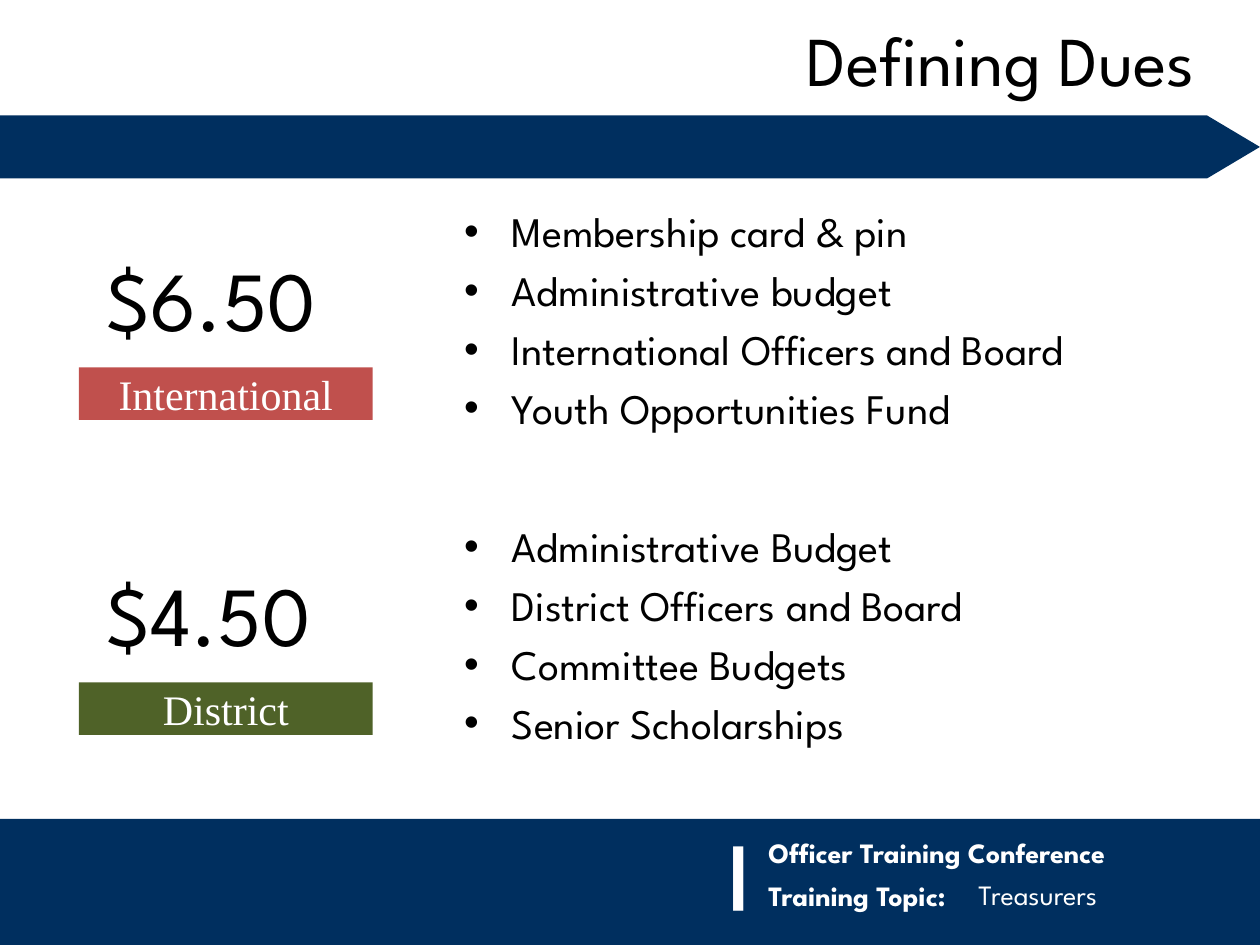
from pptx import Presentation
from pptx.dml.color import RGBColor
from pptx.enum.shapes import MSO_SHAPE
from pptx.enum.text import MSO_ANCHOR, MSO_AUTO_SIZE, PP_ALIGN
from pptx.util import Inches, Pt

RECT, ARROW = MSO_SHAPE.RECTANGLE, MSO_SHAPE.PENTAGON
TOP, MID = MSO_ANCHOR.TOP, MSO_ANCHOR.MIDDLE
LEFT, MIDDLE, RIGHT = PP_ALIGN.LEFT, PP_ALIGN.CENTER, PP_ALIGN.RIGHT
FIXED = MSO_AUTO_SIZE.NONE

THEME = {
    "navy": "002F5F", "red": "C0504D", "green": "4F6228",
    "black": "000000", "white": "FFFFFF",
    "sans": "League Spartan", "serif": "Times New Roman",
    "title": 40, "price": 48, "list": 24, "foot": 16, "bar": 44,
}

deck = Presentation()
deck.slide_width, deck.slide_height = Inches(10), Inches(7.5)
COL, ROW = deck.slide_width / 120, deck.slide_height / 90
slide = deck.slides.add_slide(deck.slide_layouts[3])
shapes = slide.shapes


def grid(x, y, w, h):
    return round(x * COL), round(y * ROW), round(w * COL), round(h * ROW)


def write(shape, text, size, ink="black", font="sans", bold=False,
          align=LEFT, anchor=TOP, gap=0.2, place=None, bullet=False):
    if place:
        shape.left, shape.top, shape.width, shape.height = grid(*place)
    frame = shape.text_frame
    frame.text = text
    frame.word_wrap, frame.auto_size = True, FIXED
    frame.vertical_anchor = anchor
    for para in frame.paragraphs:
        para.alignment = align
        para.space_before = Pt(THEME[size] * gap)
        para.font.size = Pt(THEME[size])
        para.font.name = THEME[font]
        para.font.bold = bold
        para.font.color.rgb = RGBColor.from_string(THEME[ink])
        if bullet:
            props = para._p.get_or_add_pPr()
            props.set("marL", str(Inches(0.38)))
            props.set("indent", str(-Inches(0.38)))
            mark = props.makeelement(
                "{http://schemas.openxmlformats.org/drawingml/2006/main}buChar",
                {"char": "•"})
            props.append(mark)


bands = [
    (ARROW, "navy", (0, 11, 120, 6), None),
    (RECT, "navy", (0, 78, 120, 12), None),
    (RECT, "red", (7.5, 35, 28, 5), "International"),
    (RECT, "green", (7.5, 65, 28, 5), "District"),
]
for kind, fill, place, label in bands:
    band = shapes.add_shape(kind, *grid(*place))
    band.shadow.inherit = False
    band.fill.solid()
    band.fill.fore_color.rgb = RGBColor.from_string(THEME[fill])
    band.line.fill.background()
    if kind == ARROW:
        band.adjustments[0] = 0.84
    if label:
        write(band, label, "list", ink="white", font="serif",
              align=MIDDLE, anchor=MID, gap=0)

write(shapes.title, "Defining Dues", "title", align=RIGHT,
      place=(41, 1, 74, 9))

dues = [
    ("$6.50", ["Membership card & pin", "Administrative budget",
               "International Officers and Board",
               "Youth Opportunities Fund"]),
    ("$4.50", ["Administrative Budget", "District Officers and Board",
               "Committee Budgets", "Senior Scholarships"]),
]
for i, (price, uses) in enumerate(dues):
    top = 19 + 30 * i
    write(slide.placeholders[i + 1], "\n".join(uses), "list", bullet=True,
          place=(43, top, 72, 24))
    write(shapes.add_textbox(*grid(9, top + 4, 25, 12)), price, "price")

foot = [
    ("|", "bar", True, 0, (68.4, 77.9, 6.6, 10)),
    ("Officer Training Conference", "foot", True, 0, (72, 79, 44, 4.5)),
    ("Training Topic:", "foot", True, 0, (72, 83.1, 25, 4.5)),
    ("Treasurers", "foot", False, 0.2, (92, 83, 19, 4.5)),
]
for text, size, bold, gap, place in foot:
    write(shapes.add_textbox(*grid(*place)), text, size, ink="white",
          bold=bold, gap=gap)

deck.save("out.pptx")
